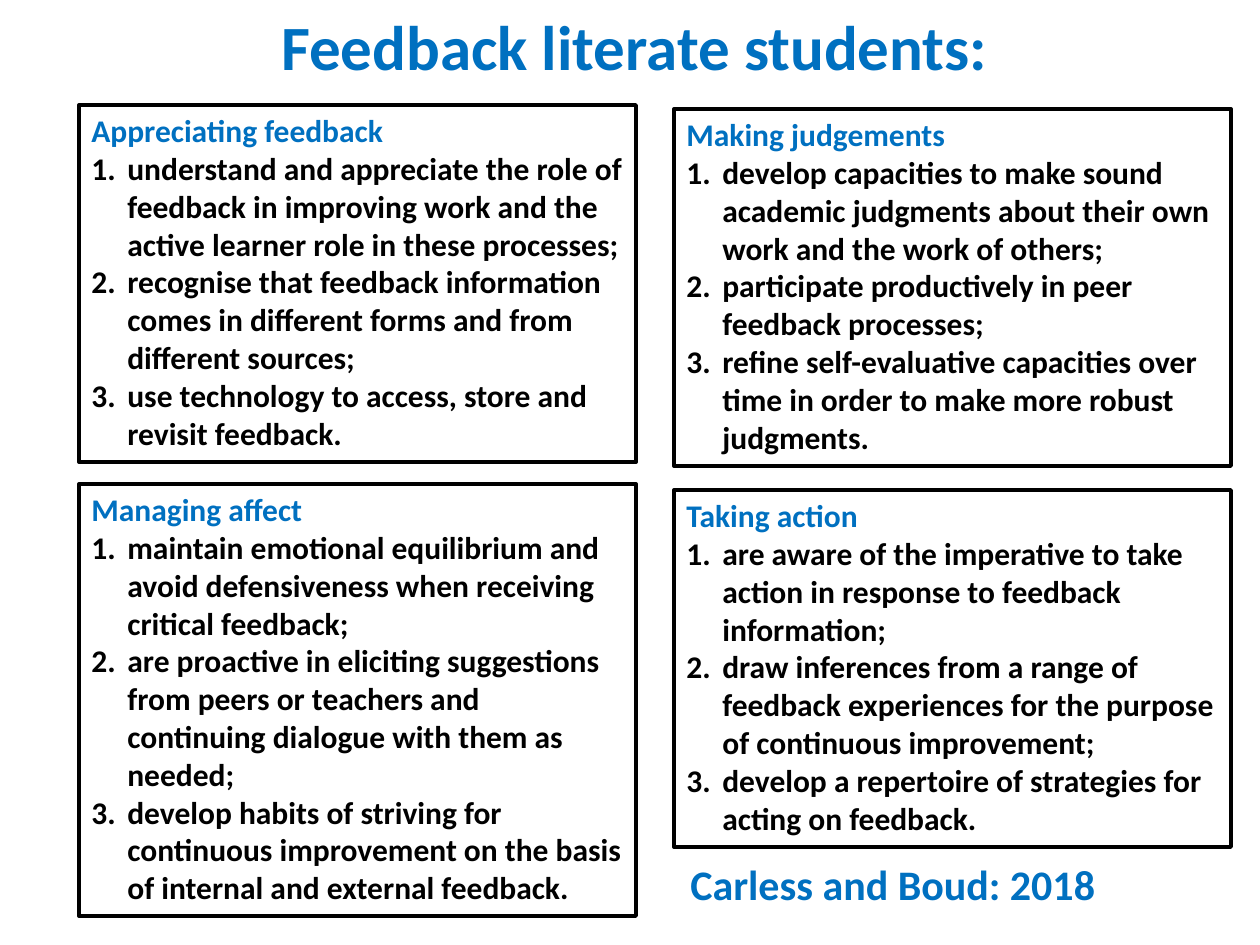
from pptx import Presentation
from pptx.dml.color import RGBColor
from pptx.enum.text import MSO_ANCHOR as Anchor, MSO_AUTO_SIZE as AutoSize, PP_ALIGN as Align
from pptx.oxml.ns import qn
from pptx.util import Emu, Pt
from lxml.etree import SubElement

PX = 914400 // 126
BLUE, BLACK = "0070C0", "000000"
INDENT = 36


def place(shape, *px):
    shape.left, shape.top, shape.width, shape.height = [Emu(n * PX) for n in px]


def style(para, size, color):
    for span in para.runs:
        span.font.name = "Calibri"
        span.font.size = Pt(size)
        span.font.bold = True
        span.font.color.rgb = RGBColor.from_string(color)


deck = Presentation()
deck.slide_width, deck.slide_height = Emu(1260 * PX), Emu(945 * PX)
page = deck.slides.add_slide(deck.slide_layouts[5])

title = page.shapes.title
place(title, 34, 26, 1201, 50)
title.text_frame.text = "Feedback literate students:"
title.text_frame.vertical_anchor = Anchor.MIDDLE
title.text_frame.auto_size = AutoSize.NONE
heading = title.text_frame.paragraphs[0]
heading.alignment = Align.CENTER
heading.line_spacing = 0.85
style(heading, 36, BLUE)

LEFT, RIGHT, WIDTH = 79, 674, 557
panels = [
    (LEFT, 105, 357, "Appreciating feedback", [
        "understand and appreciate the role of feedback in improving work and the active learner role in these processes;",
        "recognise that feedback information comes in different forms and from different sources;",
        "use technology to access, store and revisit feedback."]),
    (RIGHT, 109, 357, "Making judgements", [
        "develop capacities to make sound academic judgments about their own work and the work of others;",
        "participate productively in peer feedback processes;",
        "refine self-evaluative capacities over time in order to make more robust judgments."]),
    (LEFT, 484, 432, "Managing affect", [
        "maintain emotional equilibrium and avoid defensiveness when receiving critical feedback;",
        "are proactive in eliciting suggestions from peers or teachers and continuing dialogue with them as needed;",
        "develop habits of striving for continuous improvement on the basis of internal and external feedback."]),
    (RIGHT, 490, 357, "Taking action", [
        "are aware of the imperative to take action in response to feedback information;",
        "draw inferences from a range of feedback experiences for the purpose of continuous improvement;",
        "develop a repertoire of strategies for acting on feedback."]),
]
for left, top, height, topic, points in panels:
    box = page.shapes.add_textbox(0, 0, 0, 0)
    place(box, left, top, WIDTH, height)
    box.line.color.rgb = RGBColor.from_string(BLACK)
    box.line.width = Pt(2.25)
    frame = box.text_frame
    frame.word_wrap = True
    frame.auto_size = AutoSize.SHAPE_TO_FIT_TEXT
    frame.text = topic
    style(frame.paragraphs[0], 18, BLUE)
    for point in points:
        para = frame.add_paragraph()
        para.text = point
        props = para._p.get_or_add_pPr()
        props.set("marL", str(INDENT * PX))
        props.set("indent", str(-INDENT * PX))
        SubElement(props, qn("a:buFont"), typeface="+mj-lt")
        SubElement(props, qn("a:buAutoNum"), type="arabicPeriod")
        style(para, 18, BLACK)

citation = page.shapes.add_textbox(0, 0, 0, 0)
place(citation, 678, 852, 530, 63)
citation.text_frame.word_wrap = True
citation.text_frame.auto_size = AutoSize.SHAPE_TO_FIT_TEXT
citation.text_frame.text = "Carless and Boud: 2018"
style(citation.text_frame.paragraphs[0], 24, BLUE)

deck.save("out.pptx")
